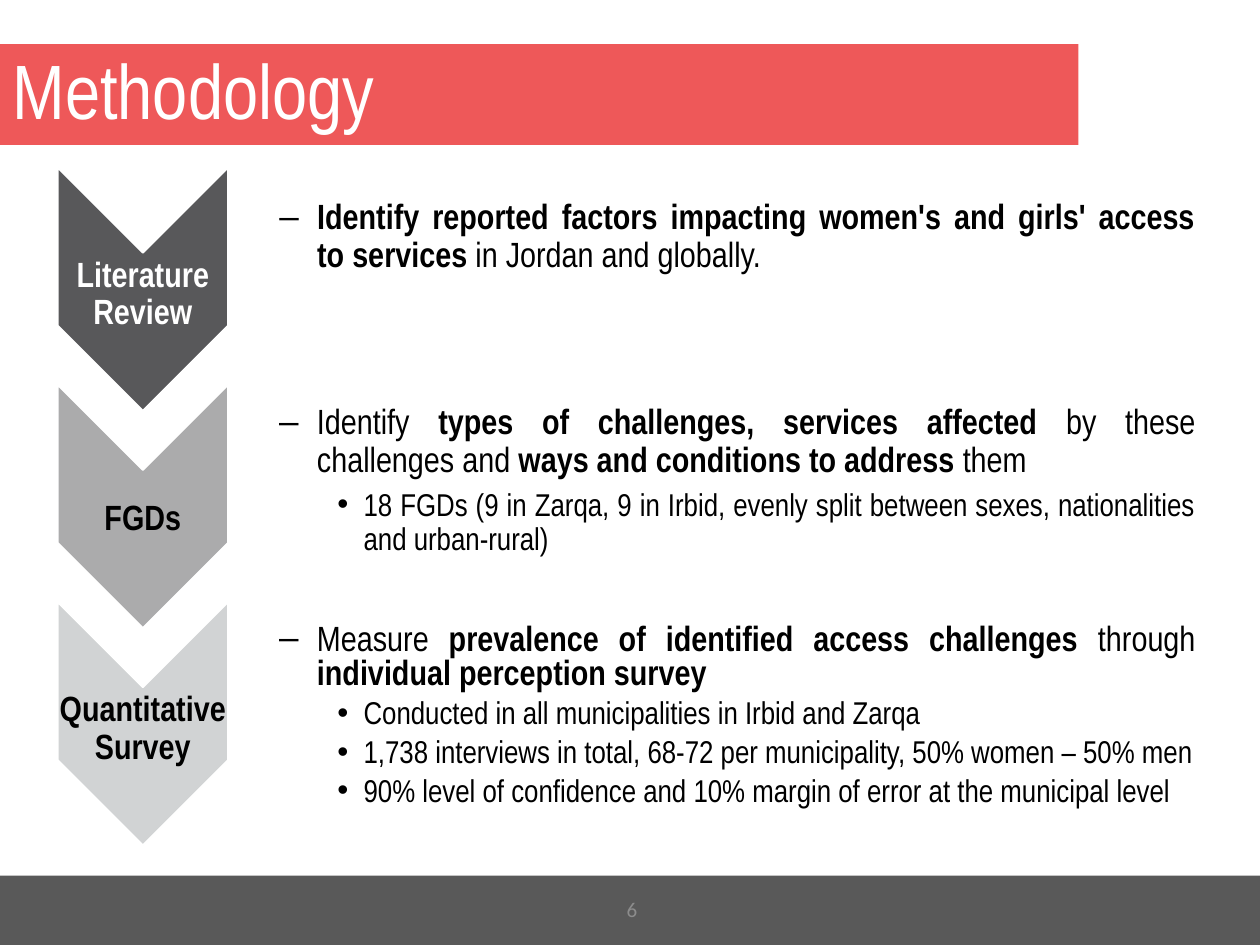
from lxml.etree import SubElement
from pptx import Presentation
from pptx.dml.color import RGBColor
from pptx.enum.shapes import MSO_SHAPE as Shape
from pptx.enum.text import MSO_ANCHOR as Anchor, MSO_AUTO_SIZE as Fit, PP_ALIGN as Align
from pptx.oxml.ns import qn
from pptx.util import Cm, Pt

FONT = "Arial Narrow"
TITLE = "Methodology"
NUMBER = "6"

# Text between ** marks is bold.
STEPS = [
    dict(name="Literature Review", fill="58585A", ink="FFFFFF", drop=0.11,
         top=3.89, high=2.79, lead=0.9,
         goal="**Identify reported factors impacting women's and girls' access "
              "to services **in Jordan and globally.",
         notes=[]),
    dict(name="FGDs", fill="ABABAC", ink="000000", drop=0.25,
         top=8.03, high=4.8, lead=0.9,
         goal="Identify **types of challenges, services affected **by these "
              "challenges and **ways and conditions to address **them",
         notes=["18 FGDs (9 in Zarqa, 9 in Irbid, evenly split between sexes, "
                "nationalities and urban-rural)"]),
    dict(name="Quantitative Survey", fill="D1D3D4", ink="000000", drop=0.11,
         top=12.47, high=4.8, lead=0.8,
         goal="Measure **prevalence of identified access challenges **through "
              "**individual perception survey",
         notes=["Conducted in all municipalities in Irbid and Zarqa",
                "1,738 interviews in total, 68-72 per municipality, "
                "50% women – 50% men",
                "90% level of confidence and 10% margin of error "
                "at the municipal level"]),
]

MID_X, MID_Y, PITCH = 2.88, 5.83, 4.38   # first arrow centre, arrow spacing
LONG, WIDE = 4.9, 3.43                   # arrow size before turning
LABEL = 1.48
LIST_X, LIST_W = 5.38, 18.97


def paint(form, color):
    form.solid()
    form.fore_color.rgb = RGBColor.from_string(color)


def place(shape, *box):
    shape.left, shape.top, shape.width, shape.height = map(Cm, box)


def block(kind, box, fill, line=None):
    shape = slide.shapes.add_shape(kind, *map(Cm, box))
    shape.shadow.inherit = False
    paint(shape.fill, fill)
    if line:
        paint(shape.line.fill, line)
        shape.line.width = Pt(1)
    else:
        shape.line.fill.background()
    return shape


def setup(shape, anchor, inset=None):
    """Fix wrapping, anchor and margins; return the text frame."""
    frame = shape.text_frame
    frame.word_wrap, frame.auto_size = True, Fit.NONE
    frame.vertical_anchor = anchor
    if inset is not None:
        frame.margin_left = frame.margin_right = Cm(inset)
        frame.margin_top = frame.margin_bottom = Cm(inset)
    return frame


def write(frame, text, size=20, color="000000", font=FONT, bold=False,
          align=Align.LEFT, lead=0.9, mark=None, indent=(0, 0), before=0, level=0):
    """Fill the empty first paragraph, or add one."""
    para = frame.paragraphs[0]
    if para.runs:
        para = frame.add_paragraph()
    para.level = level
    if mark:
        props = para._p.get_or_add_pPr()
        left, hang = indent
        props.set("marL", str(Cm(left)))
        props.set("indent", str(-Cm(hang)))
        SubElement(props, qn("a:buFont"), typeface="Arial")
        SubElement(props, qn("a:buChar"), char=mark)
    para.alignment, para.line_spacing = align, lead
    para.space_before = Pt(before)
    for i, part in enumerate(text.split("**")):
        if part:
            run = para.add_run()
            run.text = part
            run.font.size, run.font.name = Pt(size), font
            run.font.bold = bold or i % 2 == 1
            paint(run.font.fill, color)


def label(text, box, inset=0, **form):
    shape = slide.shapes.add_textbox(*map(Cm, box))
    write(setup(shape, Anchor.MIDDLE, inset), text, align=Align.CENTER, **form)


deck = Presentation()
deck.slide_width, deck.slide_height = Cm(25.4), Cm(19.05)
slide = deck.slides.add_slide(deck.slide_layouts[1])

block(Shape.RECTANGLE, (0, 17.65, 25.4, 1.4), "595959")

title, body = slide.shapes.title, slide.placeholders[1]
place(title, 0, 0.89, 21.74, 2.03)
paint(title.fill, "EE5859")
write(setup(title, Anchor.MIDDLE), TITLE, size=44, color="FFFFFF")

for i, step in enumerate(STEPS):
    mid = MID_Y + i * PITCH
    arrow = block(Shape.CHEVRON, (MID_X - LONG / 2, mid - WIDE / 2, LONG, WIDE),
                  step["fill"], "FFFFFF")
    arrow.rotation = 90
    label(step["name"],
          (MID_X - WIDE / 2, mid + step["drop"] - LABEL / 2, WIDE, LABEL),
          color=step["ink"], bold=True)

    area = LIST_X, step["top"], LIST_W, step["high"]
    if i == 0:
        place(body, *area)
        holder = body
    else:
        holder = slide.shapes.add_textbox(*map(Cm, area))
    frame = setup(holder, Anchor.TOP)
    look = dict(align=Align.JUSTIFY, lead=step["lead"])
    write(frame, step["goal"], mark="–", indent=(0.76, 0.76), **look)
    for note in step["notes"]:
        write(frame, note, size=18, mark="•", indent=(1.7, 0.53),
              before=5, level=1, **look)

label(NUMBER, (9.88, 17.81, 5.72, 1.02), size=12, color="8C8C8C",
      font="Calibri", lead=1.0)

deck.save("out.pptx")
